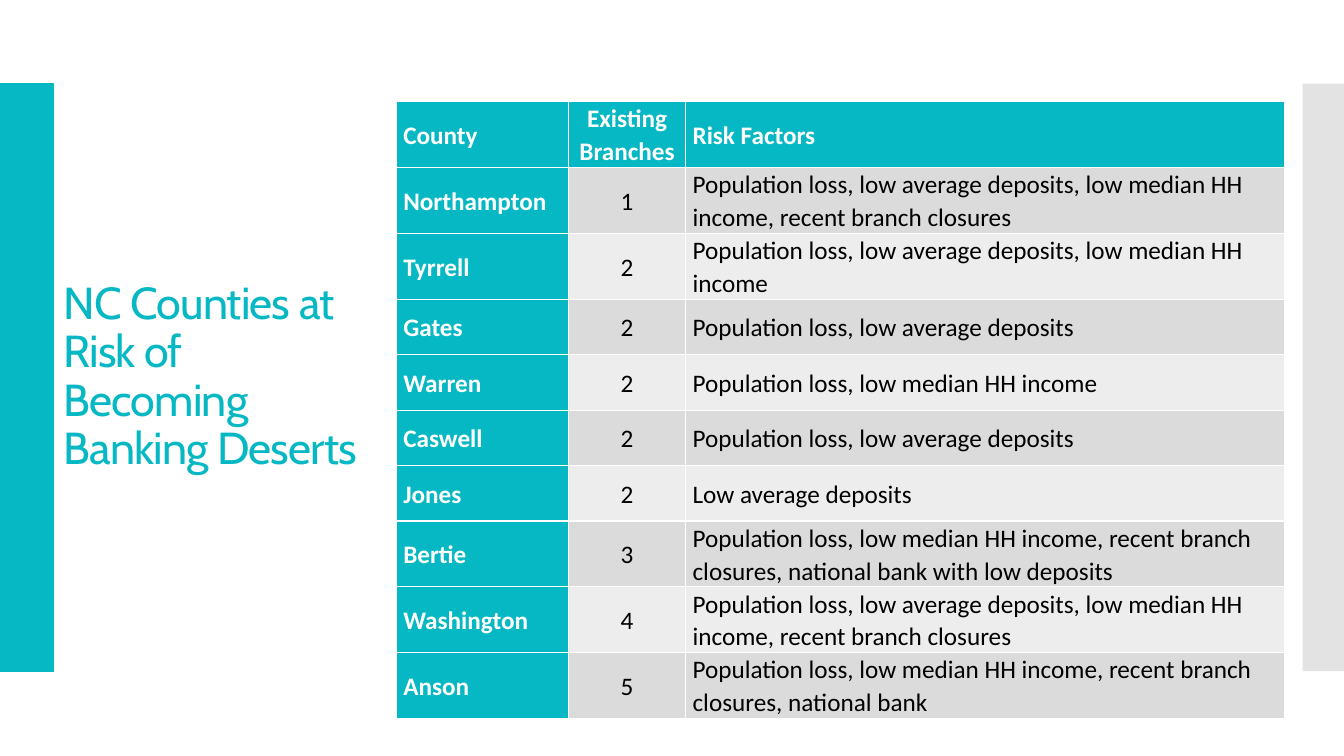
from dataclasses import dataclass

from lxml.etree import SubElement
from pptx import Presentation
from pptx.dml.color import RGBColor
from pptx.enum.shapes import MSO_SHAPE as Shape
from pptx.enum.text import MSO_ANCHOR as Anchor, PP_ALIGN as Align
from pptx.oxml import parse_xml
from pptx.oxml.ns import nsdecls, qn
from pptx.util import Inches, Pt

# Content
TITLE = "NC Counties at Risk of Becoming Banking Deserts"
HEADERS = ("County", "Existing Branches", "Risk Factors")
COUNTIES = [
    ("Northampton", 1, "Population loss, low average deposits, low median HH income, recent branch closures"),
    ("Tyrrell", 2, "Population loss, low average deposits, low median HH income"),
    ("Gates", 2, "Population loss, low average deposits"),
    ("Warren", 2, "Population loss, low median HH income"),
    ("Caswell", 2, "Population loss, low average deposits"),
    ("Jones", 2, "Low average deposits"),
    ("Bertie", 3, "Population loss, low median HH income, recent branch closures, "
                  "national bank with low deposits"),
    ("Washington", 4, "Population loss, low average deposits, low median HH income, recent branch closures"),
    ("Anson", 5, "Population loss, low median HH income, recent branch closures, national bank"),
]
COLUMN_WIDTHS = (1.71, 1.16, 5.94)
HEADER_HEIGHT, ROW_HEIGHT = 0.61, 0.55


@dataclass(frozen=True)
class Theme:
    accent: str = "06B8C3"
    side: str = "C8C8C8"
    bands: tuple = ("DBDBDB", "EDEDED")
    white: str = "FFFFFF"
    black: str = "000000"
    title_font: str = "Cabin"
    table_font: str = "Calibri"
    title_size: int = 32
    table_size: int = 18


THEME = Theme()


def paint(fill, color):
    fill.solid()
    fill.fore_color.rgb = RGBColor.from_string(color)


def format_font(font, name, size, color, bold=False):
    font.name, font.size, font.bold = name, Pt(size), bold
    font.color.rgb = RGBColor.from_string(color)


def add_bar(slide, left, width, color):
    bar = slide.shapes.add_shape(Shape.RECTANGLE, Inches(left), Inches(0.83), Inches(width), Inches(5.83))
    bar.shadow.inherit = False
    paint(bar.fill, color)
    bar.line.fill.background()
    return bar


def add_borders(cell, sides):
    properties = cell._tc.get_or_add_tcPr()
    for position, side in enumerate(sides):
        properties.insert(position, parse_xml(
            f'<a:ln{side} {nsdecls("a")} w="12700"><a:solidFill>'
            f'<a:srgbClr val="{THEME.white}"/></a:solidFill></a:ln{side}>'))


def fill_cell(cell, text, row, column):
    is_label = row == 0 or column == 0
    cell.text_frame.text = str(text)
    cell.vertical_anchor = Anchor.MIDDLE
    cell.margin_left = cell.margin_right = Inches(0.07)
    cell.margin_top = cell.margin_bottom = 0
    paint(cell.fill, THEME.accent if is_label else THEME.bands[(row - 1) % 2])
    paragraph = cell.text_frame.paragraphs[0]
    paragraph.line_spacing = 1.07
    paragraph.alignment = Align.CENTER if column == 1 else Align.LEFT
    format_font(paragraph.runs[0].font, THEME.table_font, THEME.table_size,
                THEME.white if is_label else THEME.black, is_label)
    # The header has no lines between its cells
    hidden = set()
    if row == 0:
        hidden = {"L"} if column > 0 else set()
        hidden |= {"R"} if column < len(HEADERS) - 1 else set()
    add_borders(cell, [side for side in "LRTB" if side not in hidden])


def main():
    presentation = Presentation()
    presentation.slide_width, presentation.slide_height = Inches(13.33), Inches(7.5)
    slide = presentation.slides.add_slide(presentation.slide_layouts[5])

    # Side bars
    accent_bar = add_bar(slide, 0, 0.53, THEME.accent)
    accent_bar.line.width = Pt(0.85)
    paint(accent_bar.line.fill, THEME.accent)
    side_bar = add_bar(slide, 12.92, 0.41, THEME.side)
    side_color = side_bar.fill._xPr.find(qn("a:solidFill"))[0]
    SubElement(side_color, qn("a:alpha"), val="50000")

    # Title
    title = slide.shapes.title
    title.left, title.top, title.width, title.height = map(Inches, (0.53, 1.23, 3.24, 5.03))
    frame = title.text_frame
    frame.text = TITLE
    frame.word_wrap = True
    frame.vertical_anchor = Anchor.MIDDLE
    paragraph = frame.paragraphs[0]
    paragraph.alignment = Align.LEFT
    paragraph.line_spacing = 0.9
    font = paragraph.runs[0].font
    format_font(font, THEME.title_font, THEME.title_size, THEME.accent)
    font._element.set("spc", "-60")

    # County table
    rows = [HEADERS, *COUNTIES]
    height = HEADER_HEIGHT + ROW_HEIGHT * len(COUNTIES)
    table = slide.shapes.add_table(
        len(rows), len(HEADERS), Inches(3.93), Inches(1.01),
        Inches(sum(COLUMN_WIDTHS)), Inches(height)).table
    for column, width in zip(table.columns, COLUMN_WIDTHS):
        column.width = Inches(width)
    for row, values in enumerate(rows):
        table.rows[row].height = Inches(ROW_HEIGHT if row else HEADER_HEIGHT)
        for column, text in enumerate(values):
            fill_cell(table.cell(row, column), text, row, column)

    presentation.save("out.pptx")


if __name__ == "__main__":
    main()
